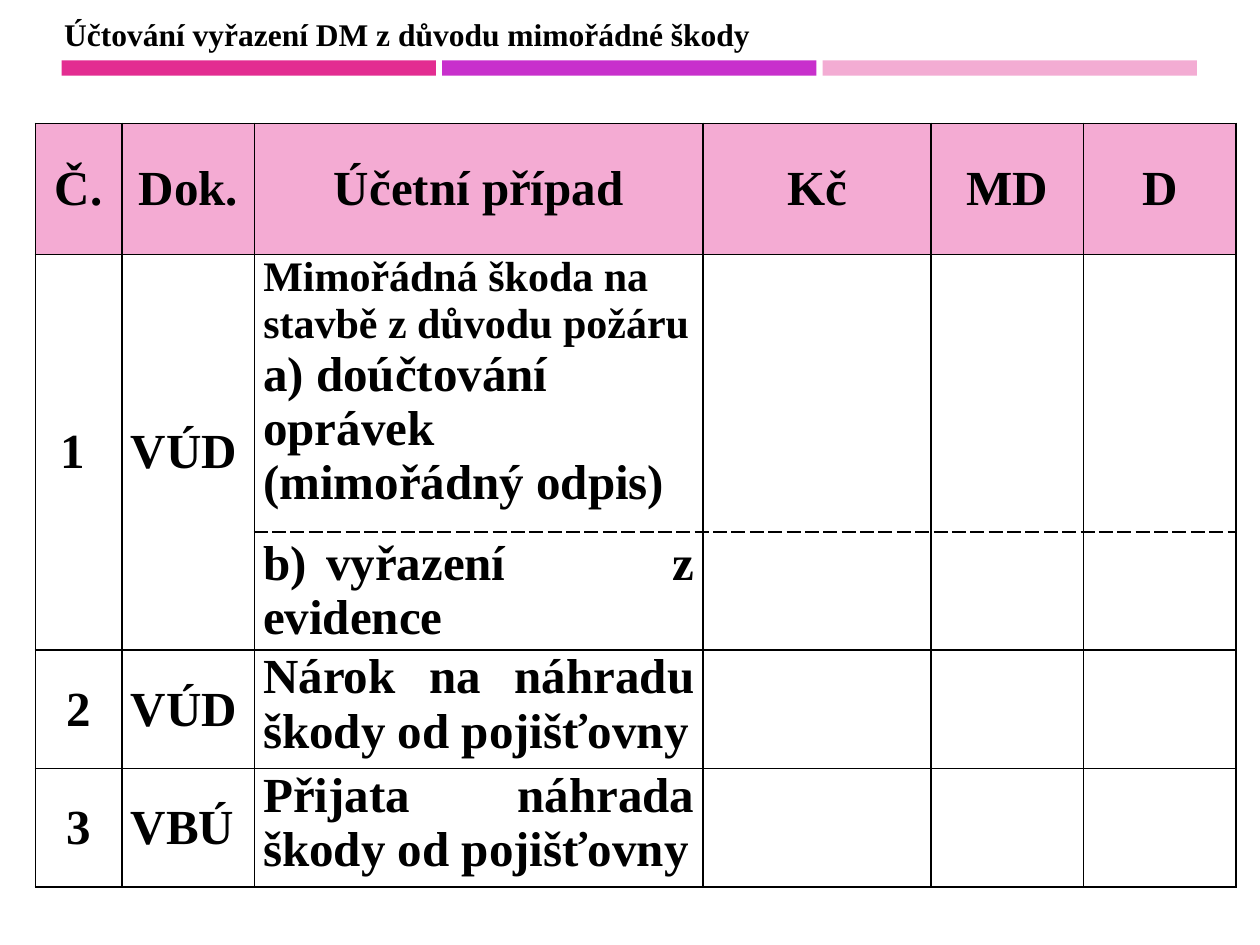
from lxml.etree import SubElement
from pptx import Presentation
from pptx.dml.color import RGBColor
from pptx.enum.shapes import MSO_SHAPE
from pptx.enum.text import MSO_ANCHOR as ANCHOR, MSO_AUTO_SIZE, PP_ALIGN as ALIGN
from pptx.oxml.ns import qn
from pptx.util import Inches, Pt

COLORS = {"text": "000000", "header": "F4ABD3",
          "bars": ["E32D91", "C830CC", "F3ACD3"]}
FONT = "Times New Roman"
TITLE = "Účtování vyřazení DM z důvodu mimořádné škody"
HEADER = ["Č.", "Dok.", "Účetní případ", "Kč", "MD", "D"]
ROWS = [
    ["1 ", "VÚD", [("Mimořádná škoda na stavbě z důvodu požáru", 24),
                   ("a) doúčtování oprávek (mimořádný odpis)", 28)]],
    ["", "", "b)\tvyřazení z evidence"],
    ["2", "VÚD", "Nárok na náhradu škody od pojišťovny"],
    ["3", "VBÚ", "Přijata náhrada škody od pojišťovny"],
]
COL_WIDTHS = [0.69, 1.05, 3.56, 1.81, 1.21, 1.21]
ROW_HEIGHTS = [1.04, 2.2, 0.94, 0.94, 0.94]
DASHED_BELOW, CASE_COL = 1, 2


def rgb(value):
    return RGBColor.from_string(value)


def write(tf, text, size=28, align=ALIGN.LEFT):
    paragraphs = text if isinstance(text, list) else [(text, size)]
    for i, (words, pts) in enumerate(paragraphs):
        p = tf.add_paragraph() if i else tf.paragraphs[0]
        p.alignment = align
        r = p.add_run()
        r.text = words
        r.font.name, r.font.size, r.font.bold = FONT, Pt(pts), True
        r.font.color.rgb = rgb(COLORS["text"])
        if "\t" in words:
            tabs = SubElement(p._p.get_or_add_pPr(), qn("a:tabLst"))
            SubElement(tabs, qn("a:tab"), pos=str(Inches(0.5)), algn="l")


def set_borders(cell, dashed):
    tc_pr = cell._tc.get_or_add_tcPr()
    for i, side in enumerate(["lnL", "lnR", "lnT", "lnB"]):
        ln = SubElement(tc_pr, qn(f"a:{side}"), w=str(Pt(1)))
        fill = SubElement(ln, qn("a:solidFill"))
        SubElement(fill, qn("a:srgbClr"), val=COLORS["text"])
        SubElement(ln, qn("a:prstDash"), val="sysDash" if side == dashed else "solid")
        tc_pr.insert(i, ln)


def add_title(s):
    sp = s.shapes.title
    sp.left, sp.top, sp.width, sp.height = map(Inches, (0.41, 0.07, 5.7, 0.4))
    tf = sp.text_frame
    tf.word_wrap = False
    tf.auto_size = MSO_AUTO_SIZE.SHAPE_TO_FIT_TEXT
    tf.vertical_anchor = ANCHOR.TOP
    write(tf, TITLE, size=18)


def add_bars(s):
    for i, color in enumerate(COLORS["bars"]):
        sp = s.shapes.add_shape(MSO_SHAPE.RECTANGLE, Inches(0.49 + 3.02 * i),
                                Inches(0.48), Inches(2.97), Inches(0.12))
        sp.shadow.inherit = False
        sp.fill.solid()
        sp.fill.fore_color.rgb = rgb(color)
        sp.line.fill.background()


def add_entries(s):
    table = s.shapes.add_table(
        len(ROW_HEIGHTS), len(COL_WIDTHS), Inches(0.28), Inches(0.98),
        Inches(sum(COL_WIDTHS)), Inches(sum(ROW_HEIGHTS))).table
    table.first_row = table.horz_banding = False
    for column, width in zip(table.columns, COL_WIDTHS):
        column.width = Inches(width)
    for row, height in zip(table.rows, ROW_HEIGHTS):
        row.height = Inches(height)
    for i, values in enumerate([HEADER] + ROWS):
        for j in range(len(COL_WIDTHS)):
            cell = table.cell(i, j)
            cell.margin_left = cell.margin_right = Inches(0.07)
            cell.margin_top = cell.margin_bottom = 0
            top = j == CASE_COL and i not in (0, DASHED_BELOW + 1)
            cell.vertical_anchor = ANCHOR.TOP if top else ANCHOR.MIDDLE
            if i == 0:
                cell.fill.solid()
                cell.fill.fore_color.rgb = rgb(COLORS["header"])
            else:
                cell.fill.background()
            dashed = {DASHED_BELOW: "lnB", DASHED_BELOW + 1: "lnT"}.get(i)
            set_borders(cell, dashed if j >= CASE_COL else None)
            if j < len(values) and values[j]:
                justified = j == CASE_COL and i > DASHED_BELOW
                centred = i == 0 or j == 0
                align = (ALIGN.CENTER if centred else
                         ALIGN.JUSTIFY if justified else ALIGN.LEFT)
                write(cell.text_frame, values[j], align=align)
    for j in range(CASE_COL):
        table.cell(DASHED_BELOW, j).merge(table.cell(DASHED_BELOW + 1, j))


def main():
    """Build the slide on accounting for assets lost to extraordinary damage."""
    prs = Presentation()
    prs.slide_width, prs.slide_height = Inches(10), Inches(7.5)
    s = prs.slides.add_slide(prs.slide_layouts[5])
    add_bars(s)
    add_title(s)
    add_entries(s)
    prs.save("out.pptx")


if __name__ == "__main__":
    main()
